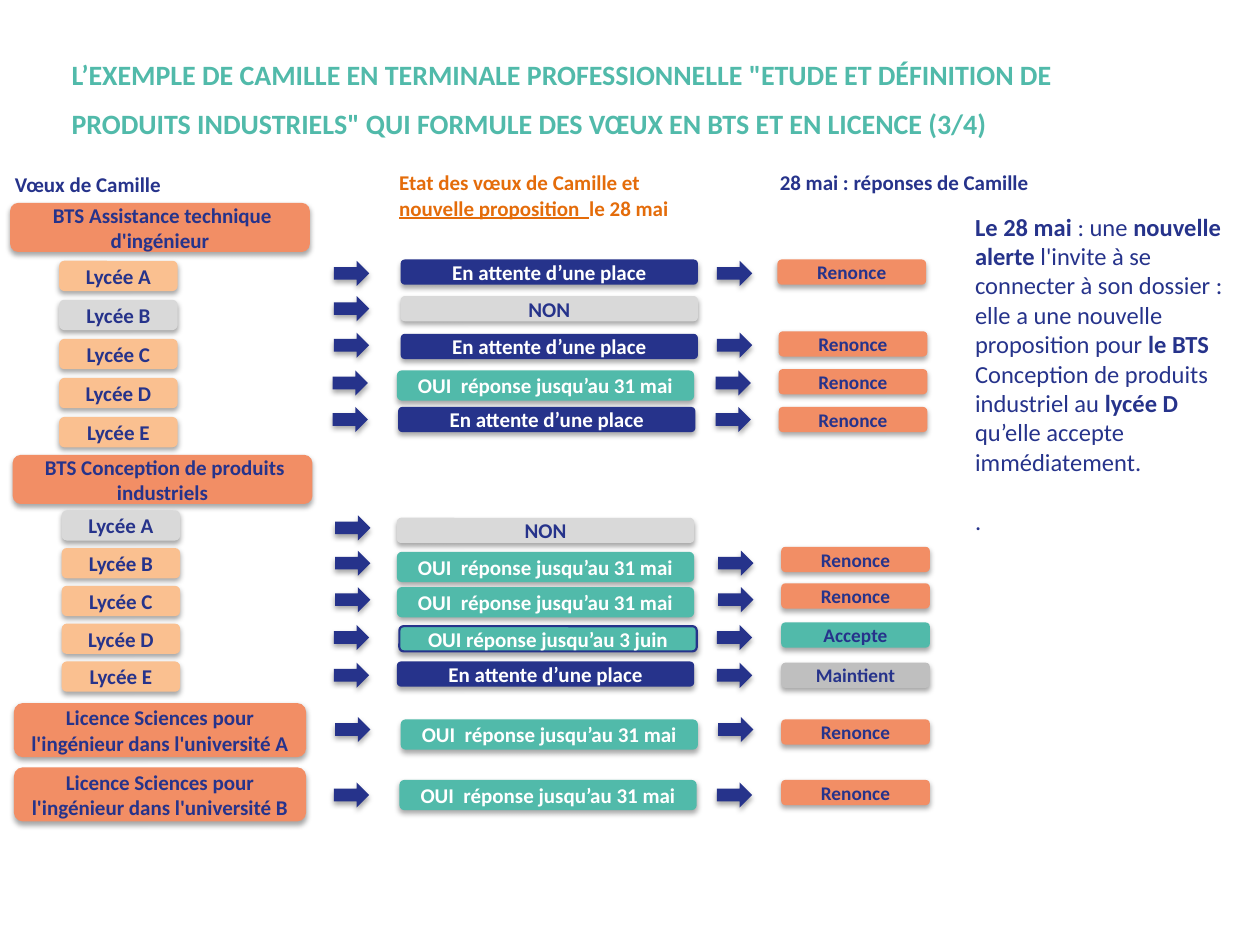
from lxml import etree
from pptx import Presentation
from pptx import util as u
from pptx.dml.color import RGBColor
from pptx.enum import shapes, text
from pptx.oxml import ns

NAVY = RGBColor(0x26, 0x33, 0x8B)
TEAL = RGBColor(0x51, 0xBA, 0xAA)
CORAL = RGBColor(0xF2, 0x8E, 0x65)
PEACH = RGBColor(0xFA, 0xC0, 0x90)
ORANGE = RGBColor(0xE4, 0x6C, 0x0A)
LIGHT_GREY = RGBColor(0xD9, 0xD9, 0xD9)
GREY = RGBColor(0xBF, 0xBF, 0xBF)
WHITE = RGBColor(0xFF, 0xFF, 0xFF)

WAIT, NO, YES, YES_JUNE = "wait", "no", "yes", "yes_june"
STATES = {
    WAIT: ("En attente d’une place", NAVY, WHITE, 0.2),
    NO: ("NON", LIGHT_GREY, NAVY, 0.2),
    YES: ("OUI  réponse jusqu’au 31 mai", TEAL, WHITE, 0.24),
    YES_JUNE: ("OUI réponse jusqu’au 3 juin", TEAL, WHITE, 0.2),
}
ANSWERS = {"Renonce": CORAL, "Accepte": TEAL, "Maintient": GREY}
ARROW_GAP = 3.04

COURSES = [
    (" BTS Assistance technique d'ingénieur", 0.08, 1.61, 2.38, 0.39),
    (" BTS Conception de produits industriels", 0.1, 3.61, 2.38, 0.39),
    ("Licence Sciences pour l'ingénieur dans l'université A", 0.11, 5.58, 2.32, 0.43),
    ("Licence Sciences pour l'ingénieur dans l'université B", 0.11, 6.09, 2.32, 0.43),
]
SCHOOL_GROUPS = [(0.47, 2.07, 0.31, "B"), (0.49, 4.05, 0.3, "A")]

OUTCOMES = [
    ((2.65, 2.07), WAIT, (3.18, 2.06), "Renonce", (6.17, 2.06)),
    ((2.65, 2.35), NO, (3.18, 2.35), None, None),
    ((2.65, 2.64), WAIT, (3.18, 2.65), "Renonce", (6.18, 2.63)),
    ((2.64, 2.94), YES, (3.15, 2.94), "Renonce", (6.18, 2.93)),
    ((2.64, 3.23), WAIT, (3.16, 3.23), "Renonce", (6.18, 3.23)),
    ((2.66, 4.09), NO, (3.15, 4.11), None, None),
    ((2.66, 4.37), YES, (3.15, 4.38), "Renonce", (6.2, 4.34)),
    ((2.66, 4.66), YES, (3.15, 4.66), "Renonce", (6.2, 4.63)),
    ((2.65, 4.96), YES_JUNE, (3.17, 4.97), "Accepte", (6.2, 4.94)),
    ((2.65, 5.26), WAIT, (3.15, 5.25), "Maintient", (6.2, 5.26)),
    ((2.66, 5.69), YES, (3.18, 5.71), "Renonce", (6.2, 5.71)),
    ((2.65, 6.21), YES, (3.17, 6.19), "Renonce", (6.2, 6.19)),
]

BOLD, PLAIN = {"bold": True}, {"bold": False}
ALERT = [
    [("Le 28 mai ", BOLD), (": une ", PLAIN), ("nouvelle alerte ", BOLD),
     ("l'invite à se connecter à son dossier : elle a une nouvelle proposition pour ", PLAIN),
     ("le BTS ", BOLD), ("Conception de produits industriel au ", PLAIN),
     ("lycée D ", BOLD), ("qu’elle accepte immédiatement.", PLAIN)],
    [(".", PLAIN)],
]


class WishSlide:
    font_name = "Calibri"

    def __init__(self, slide):
        self.slide = slide

    def add_runs(self, paragraph, pieces, size, color):
        for words, formats in pieces:
            run = paragraph.add_run()
            run.text = words
            values = {"name": self.font_name, "size": u.Pt(size), "bold": True, **formats}
            for attribute, value in values.items():
                setattr(run.font, attribute, value)
            run.font.color.rgb = color

    def add_shadow(self, shape):
        effects = etree.SubElement(shape._element.spPr, ns.qn("a:effectLst"))
        shadow = etree.SubElement(effects, ns.qn("a:outerShdw"), blurRad=str(u.Pt(3.1)),
                                  dist=str(u.Pt(1.8)), dir="5400000", rotWithShape="0")
        black = etree.SubElement(shadow, ns.qn("a:srgbClr"), val="000000")
        etree.SubElement(black, ns.qn("a:alpha"), val="35000")

    def add_block(self, kind, left, top, width, height, fill, outline=None):
        block = self.slide.shapes.add_shape(
            kind, u.Inches(left), u.Inches(top), u.Inches(width), u.Inches(height))
        block.fill.solid()
        block.fill.fore_color.rgb = fill
        if outline is None:
            block.line.fill.background()
        else:
            block.line.color.rgb = outline
            block.line.width = u.Pt(1.25)
        self.add_shadow(block)
        return block

    def add_label(self, words, left, top, width, height, fill, color=NAVY, size=12, outline=None):
        label = self.add_block(shapes.MSO_SHAPE.ROUNDED_RECTANGLE,
                               left, top, width, height, fill, outline)
        frame = label.text_frame
        frame.word_wrap = True
        frame.vertical_anchor = text.MSO_ANCHOR.MIDDLE
        frame.paragraphs[0].alignment = text.PP_ALIGN.CENTER
        self.add_runs(frame.paragraphs[0], [(words, {})], size, color)

    def add_arrow(self, left, top):
        self.add_block(shapes.MSO_SHAPE.RIGHT_ARROW, left, top, 0.28, 0.2, NAVY)

    def add_text(self, paragraphs, left, top, width, height, size=12, color=NAVY,
                 anchor=text.MSO_ANCHOR.TOP, **paragraph_formats):
        frame = self.slide.shapes.add_textbox(
            u.Inches(left), u.Inches(top), u.Inches(width), u.Inches(height)).text_frame
        frame.word_wrap = True
        frame.vertical_anchor = anchor
        for index, pieces in enumerate(paragraphs):
            paragraph = frame.add_paragraph() if index else frame.paragraphs[0]
            if index:
                paragraph.space_before = u.Pt(size * 1.2)
            for attribute, value in paragraph_formats.items():
                setattr(paragraph, attribute, value)
            self.add_runs(paragraph, pieces, size, color)


def main():
    deck = Presentation()
    deck.slide_width, deck.slide_height = u.Inches(10), u.Inches(7.5)
    wishes = WishSlide(deck.slides.add_slide(deck.slide_layouts[6]))

    wishes.add_text([[("L’EXEMPLE DE CAMILLE EN TERMINALE PROFESSIONNELLE \"ETUDE ET DÉFINITION DE "
                       "PRODUITS INDUSTRIELS\" QUI FORMULE DES VŒUX EN BTS ET EN LICENCE (3/4)", {})]],
                    0.47, 0.2, 8.62, 1.04, 16, TEAL, text.MSO_ANCHOR.MIDDLE, line_spacing=u.Pt(28))
    wishes.add_text([[("Vœux de Camille", {})]], 0.02, 1.31, 1.54, 0.3)
    wishes.add_text([[("Etat des vœux de Camille et ", {}),
                      ("nouvelle proposition  ", {"underline": True}),
                      ("le 28 mai", {})]], 3.07, 1.3, 2.55, 0.5, color=ORANGE)
    wishes.add_text([[("28 mai : réponses de Camille", {})]], 6.09, 1.3, 2.55, 0.3)
    wishes.add_text(ALERT, 7.64, 1.63, 2.32, 3.16, 14)

    for course, *bounds in COURSES:
        wishes.add_label(course, *bounds, CORAL)
    for left, top, pitch, refused in SCHOOL_GROUPS:
        for row, letter in enumerate("ABCDE"):
            fill = LIGHT_GREY if letter == refused else PEACH
            wishes.add_label(f"Lycée {letter}", left, top + row * pitch, 0.94, 0.24, fill)

    for (arrow_left, arrow_top), state, state_at, answer, answer_at in OUTCOMES:
        words, fill, color, height = STATES[state]
        wishes.add_arrow(arrow_left, arrow_top)
        wishes.add_label(words, *state_at, 2.36, height, fill, color,
                         outline=NAVY if state == YES_JUNE else None)
        if answer:
            wishes.add_arrow(arrow_left + ARROW_GAP, arrow_top)
            wishes.add_label(answer, *answer_at, 1.18, 0.2, ANSWERS[answer], size=11)

    deck.save("out.pptx")


if __name__ == "__main__":
    main()
